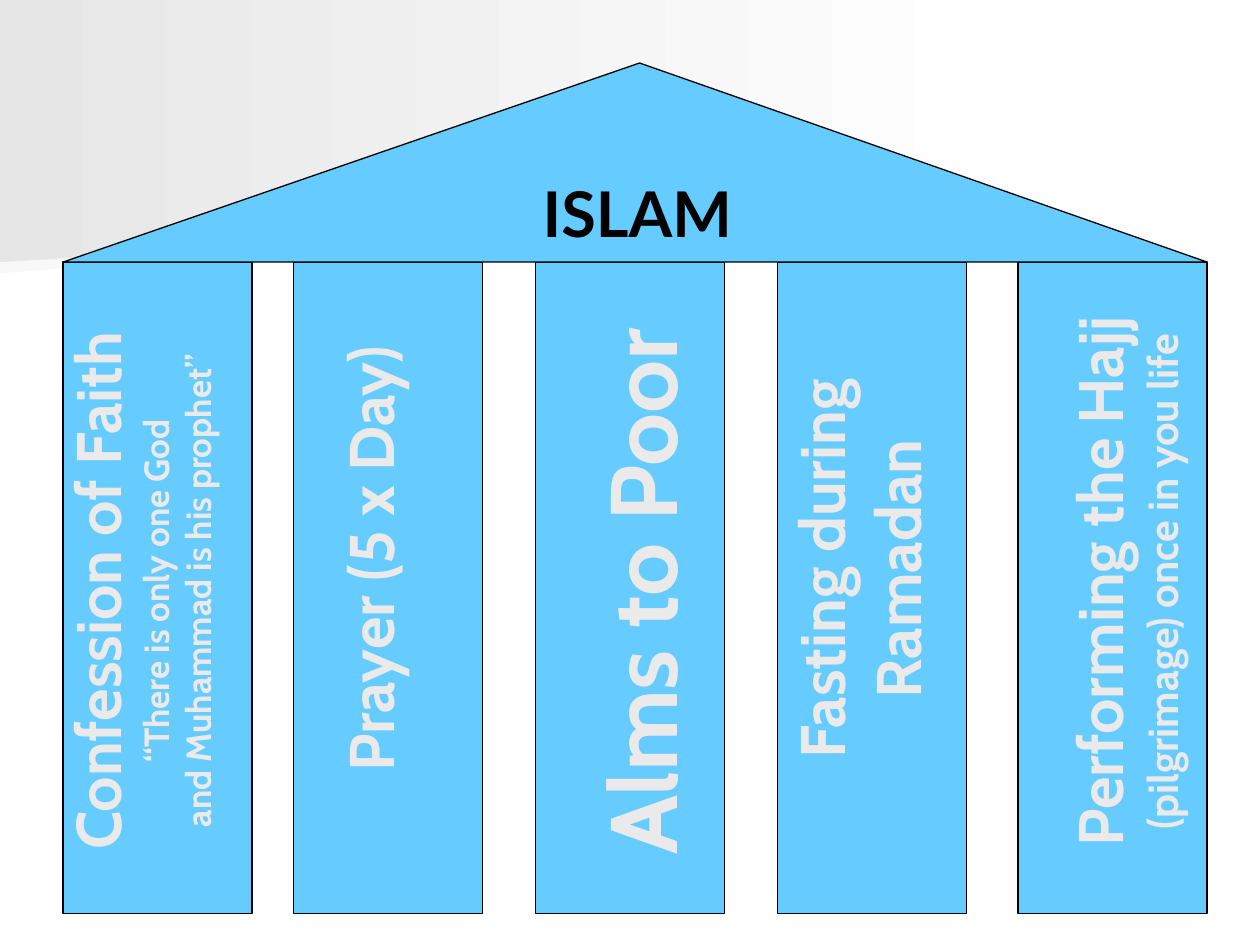
from pptx import Presentation
from pptx.dml.color import RGBColor
from pptx.enum import shapes, text
from pptx.util import Inches, Pt

SKY, BLACK, PALE = "66CCFF", "000000", "EAEAEA"
PILLAR_LEFTS = (0.5, 2.33, 4.25, 6.17, 8.08)
LABELS = (
    ((-1.42, 4, 5.05, 1.38), (("Confession of Faith", 36),
                              ("“There is only one God", 20),
                              ("and Muhammad is his prophet”", 20))),
    ((0.75, 4.08, 4.37, 0.71), (("Prayer (5 x Day)", 36),)),
    ((2.56, 4.19, 5.05, 1.01), (("Alms to Poor", 54),)),
    ((4.89, 3.86, 3.86, 1.31), (("Fasting during", 36), ("Ramadan", 36))),
    ((6.31, 4.06, 5.23, 1.11), (("Performing the Hajj", 36),
                                ("(pilgrimage) once in you life", 24))),
)


def color(value):
    return RGBColor.from_string(value)


class Temple:
    """Holds the style and the current slide, and draws each kind of element."""

    def __init__(self, slide):
        self.s = slide

    def backdrop(self, points, start, end):
        corners = [(Inches(x), Inches(y)) for x, y in points]
        builder = self.s.shapes.build_freeform(*corners[0])
        builder.add_line_segments(corners[1:], close=True)
        sp = builder.convert_to_shape()
        sp.shadow.inherit = False
        sp.line.fill.background()
        sp.fill.gradient()
        sp.fill.gradient_angle = 0
        for stop, value in zip(sp.fill.gradient_stops, (start, end)):
            stop.color.rgb = color(value)

    def block(self, kind, box):
        sp = self.s.shapes.add_shape(kind, *map(Inches, box))
        sp.shadow.inherit = False
        sp.fill.solid()
        sp.fill.fore_color.rgb = color(SKY)
        sp.line.color.rgb = color(BLACK)
        sp.line.width = Pt(0.75)
        return sp

    def fill_text(self, tf, lines, font, value):
        for i, (words, size) in enumerate(lines):
            p = tf.add_paragraph() if i else tf.paragraphs[0]
            p.text = words
            p.alignment = text.PP_ALIGN.CENTER
            p.font.name = font
            p.font.size = Pt(size)
            p.font.bold = True
            p.font.color.rgb = color(value)

    def roof(self, box, title):
        sp = self.block(shapes.MSO_SHAPE.ISOSCELES_TRIANGLE, box)
        sp.adjustments[0] = 0.504
        sp.text_frame.word_wrap = False
        self.fill_text(sp.text_frame, [(title, 36)], "Lato", BLACK)

    def label(self, box, lines):
        sp = self.s.shapes.add_textbox(*map(Inches, box))
        sp.rotation = 270
        tf = sp.text_frame
        tf.word_wrap = False
        tf.auto_size = text.MSO_AUTO_SIZE.SHAPE_TO_FIT_TEXT
        self.fill_text(tf, lines, "Cabin", PALE)


def main():
    prs = Presentation()
    prs.slide_width, prs.slide_height = Inches(10), Inches(7.5)
    temple = Temple(prs.slides.add_slide(prs.slide_layouts[6]))
    temple.backdrop([(7.78, 1.53), (0, 2.17), (0, 1.01), (7.79, 1.01)], "F8F8F8", "FFFFFF")
    temple.backdrop([(7.92, 1.62), (0, 2.08), (0, 0), (7.92, 0)], "E6E6E6", "FFFFFF")
    for left in PILLAR_LEFTS:
        temple.block(shapes.MSO_SHAPE.RECTANGLE, (left, 2.08, 1.5, 5.17))
    temple.roof((0.5, 0.5, 9.08, 1.58), "ISLAM")
    for box, lines in LABELS:
        temple.label(box, lines)
    prs.save("out.pptx")


if __name__ == "__main__":
    main()
